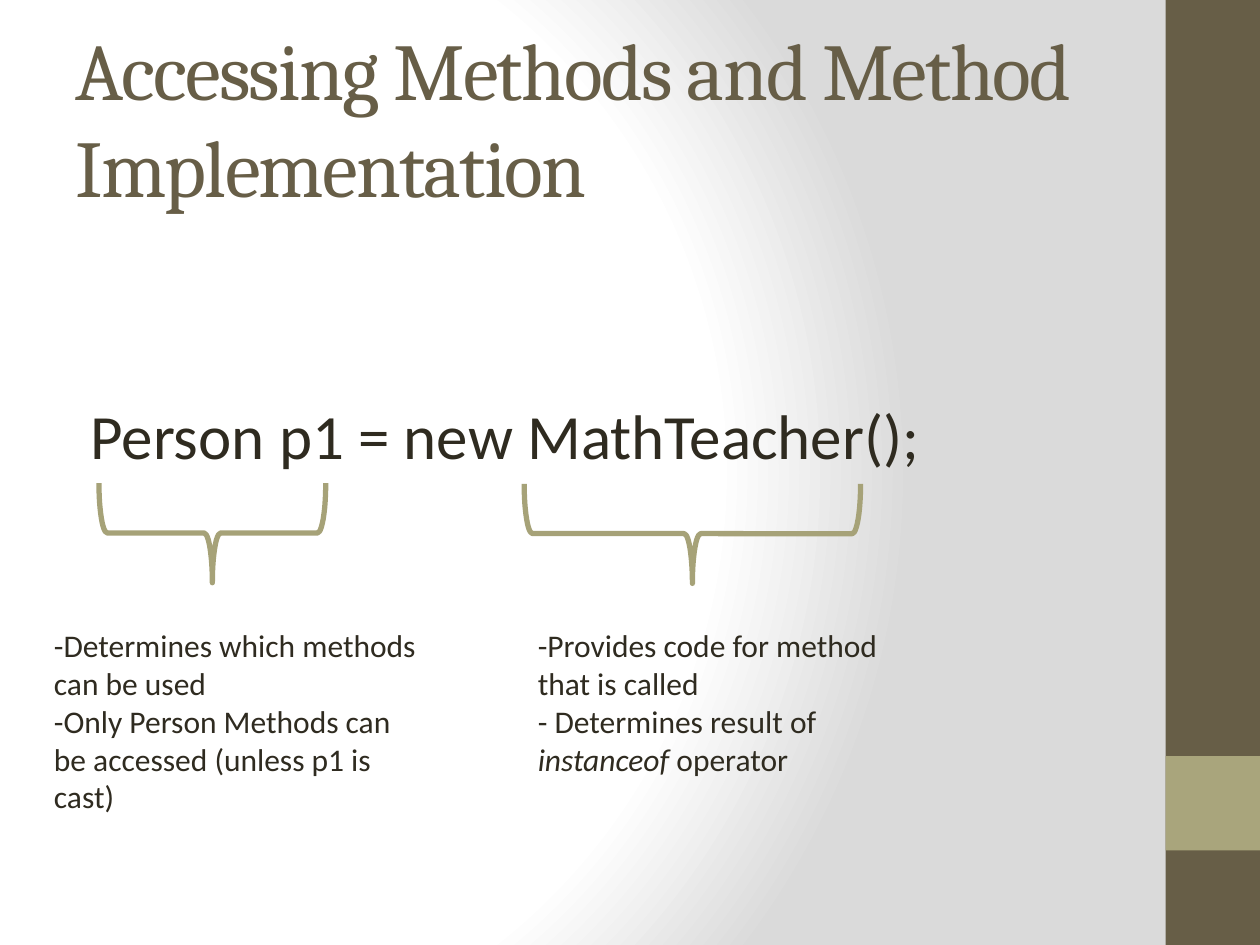
from dataclasses import dataclass

from pptx import Presentation
from pptx.dml.color import RGBColor as Rgb
from pptx.enum.shapes import MSO_SHAPE as Kind
from pptx.enum.text import MSO_ANCHOR as Anchor
from pptx.oxml import parse_xml
from pptx.oxml.ns import nsdecls
from pptx.util import Inches, Pt


@dataclass(frozen=True)
class Theme:
    dark: str = "675E47"
    sage: str = "A9A57C"
    brace: str = "A6A278"
    ink: str = "2F2B20"
    white: str = "FFFFFF"
    gray: str = "DADADA"
    head: str = "Cambria"
    body: str = "Calibri"
    title: int = 46
    code: int = 36
    note: int = 18
    line: int = 3


THEME = Theme()


def add_back(slide):
    stops = ((0, THEME.white), (75, THEME.white), (100, THEME.gray))
    marks = "".join(
        f'<a:gs pos="{pos * 1000}"><a:srgbClr val="{tone}"/></a:gs>'
        for pos, tone in stops
    )
    slide.element.cSld.insert(0, parse_xml(
        f'<p:bg {nsdecls("p", "a")}><p:bgPr><a:gradFill rotWithShape="1">'
        f'<a:gsLst>{marks}</a:gsLst><a:path path="circle">'
        '<a:fillToRect l="20000" t="50000" r="100000" b="50000"/>'
        '</a:path></a:gradFill><a:effectLst/></p:bgPr></p:bg>'
    ))


def add_shape(slide, kind, box):
    shape = slide.shapes.add_shape(kind, *map(Inches, box))
    shape.shadow.inherit = False
    return shape


def add_band(slide, top, high, tone):
    band = add_shape(slide, Kind.RECTANGLE, (9.25, top, 0.75, high))
    band.fill.solid()
    band.fill.fore_color.rgb = Rgb.from_string(tone)
    band.line.fill.background()


def add_brace(slide, left, top, high):
    brace = add_shape(slide, Kind.RIGHT_BRACE, (left, top, 0.79, high))
    brace.rotation = 90
    brace.fill.background()
    brace.line.color.rgb = Rgb.from_string(THEME.brace)
    brace.line.width = Pt(THEME.line)


def add_text(slide, box, paras, size, font=THEME.body, tone=THEME.ink):
    frame = slide.shapes.add_textbox(*map(Inches, box)).text_frame
    frame.word_wrap = True
    for num, runs in enumerate(paras):
        para = frame.add_paragraph() if num else frame.paragraphs[0]
        for text, slant in runs:
            run = para.add_run()
            run.text = text
            run.font.name = font
            run.font.size = Pt(size)
            run.font.italic = slant
            run.font.color.rgb = Rgb.from_string(tone)
    return frame


def add_title(slide, text):
    frame = add_text(slide, (0.5, 0.3, 8.33, 1.25), [[(text, False)]],
                     THEME.title, THEME.head, THEME.dark)
    frame.vertical_anchor = Anchor.MIDDLE
    run = frame.paragraphs[0].runs[0]
    run.font._element.set("spc", "-100")


def main():
    deck = Presentation()
    deck.slide_width, deck.slide_height = Inches(10), Inches(7.5)
    slide = deck.slides.add_slide(deck.slide_layouts[6])
    add_back(slide)
    add_band(slide, 0, 7.5, THEME.dark)
    add_band(slide, 6, 0.75, THEME.sage)
    add_title(slide, "Accessing Methods and Method Implementation")
    add_text(slide, (0.62, 3.1, 8.21, 0.71),
             [[("Person p1 = new MathTeacher();", False)]], THEME.code)
    add_brace(slide, 1.29, 3.33, 1.8)
    add_brace(slide, 5.1, 2.9, 2.67)
    add_text(slide, (0.33, 4.92, 3.13, 1.62), [
        [("-Determines which methods can be used", False)],
        [("-Only Person Methods can be accessed (unless p1 is cast)", False)],
    ], THEME.note)
    add_text(slide, (4.17, 4.92, 3.13, 1.31), [
        [("-Provides code for method that is called", False)],
        [("- Determines result of ", False), ("instanceof", True),
         (" operator", False)],
    ], THEME.note)
    deck.save("out.pptx")


if __name__ == "__main__":
    main()
